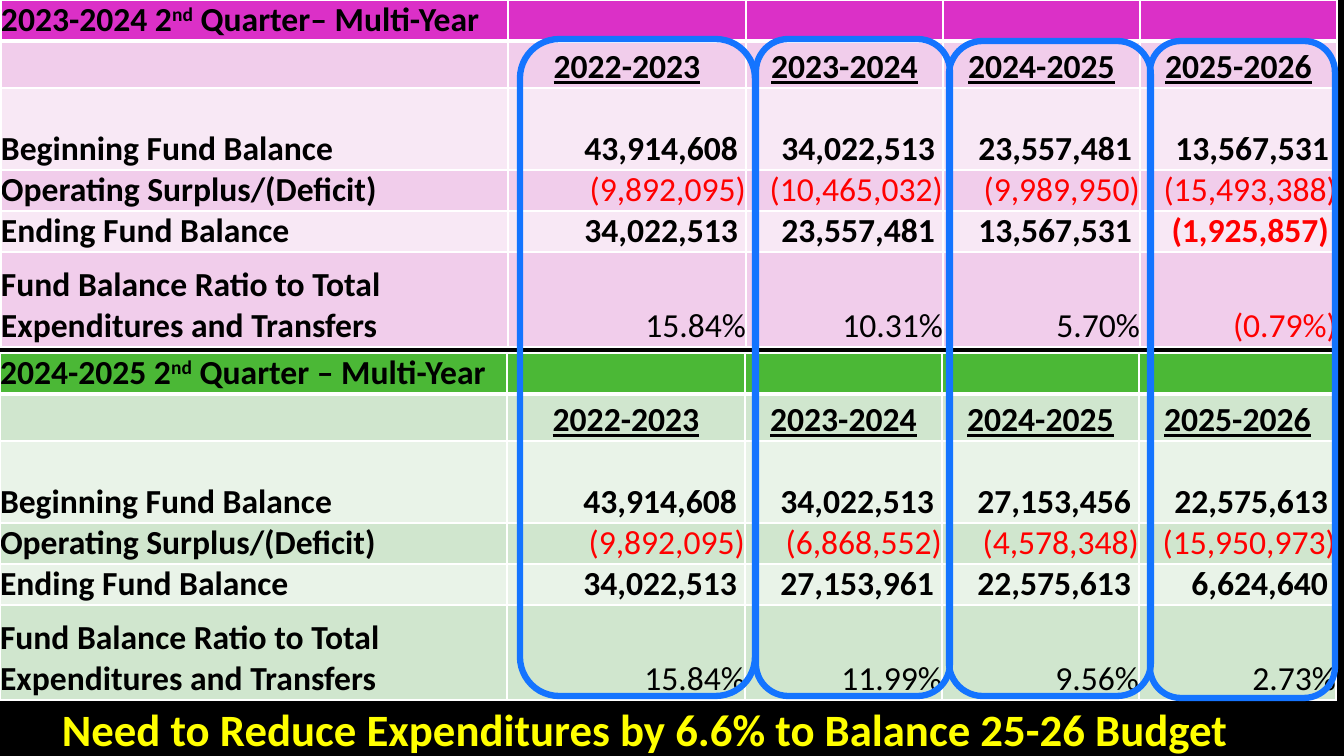
from pptx import Presentation
from pptx.dml.color import RGBColor
from pptx.enum.shapes import MSO_SHAPE
from pptx.enum.text import MSO_ANCHOR, PP_ALIGN
from pptx.oxml import parse_xml
from pptx.oxml.ns import nsdecls
from pptx.util import Pt

BLACK = RGBColor(0x00, 0x00, 0x00)
WHITE = RGBColor(0xFF, 0xFF, 0xFF)
RED = RGBColor(0xFF, 0x00, 0x00)
YELLOW = RGBColor(0xFF, 0xFF, 0x00)
BLUE = RGBColor(0x14, 0x74, 0xFF)
PINKS = (RGBColor(0xDB, 0x30, 0xC7), RGBColor(0xF1, 0xCD, 0xEB), RGBColor(0xF8, 0xE8, 0xF5))
GREENS = (RGBColor(0x4B, 0xB8, 0x36), RGBColor(0xD0, 0xE6, 0xCE), RGBColor(0xE9, 0xF3, 0xE8))

COLS = (507, 238, 197, 197, 197)
ROWS = (41, 47, 82, 41, 41, 95)
YEARS = ("2022-2023", "2023-2024", "2024-2025", "2025-2026")
LABELS = ("Beginning Fund Balance", "Operating Surplus/(Deficit)", "Ending Fund Balance",
          "Fund Balance Ratio to Total Expenditures and Transfers")
BOLD_ROWS = (2, 4)
EARLIER = (
    ("43,914,608", "34,022,513", "23,557,481", "13,567,531"),
    ("(9,892,095)", "(10,465,032)", "(9,989,950)", "(15,493,388)"),
    ("34,022,513", "23,557,481", "13,567,531", "(1,925,857)"),
    ("15.84%", "10.31%", "5.70%", "(0.79%)"),
)
LATER = (
    ("43,914,608", "34,022,513", "27,153,456", "22,575,613"),
    ("(9,892,095)", "(6,868,552)", "(4,578,348)", "(15,950,973)"),
    ("34,022,513", "27,153,961", "22,575,613", "6,624,640"),
    ("15.84%", "11.99%", "9.56%", "2.73%"),
)
FRAMES = ((520, 39, 235, 657), (756, 39, 194, 657), (949, 41, 202, 655), (1150, 41, 185, 657))


class Deck:
    """Holds the style and the current slide, and draws each kind of element."""

    scale = 12192000 / 1344
    style = {"name": "Calibri", "size": Pt(24), "bold": True}

    def __init__(self):
        self.prs = Presentation()
        self.prs.slide_width, self.prs.slide_height = self.emu(1344, 756)
        self.s = self.prs.slides.add_slide(self.prs.slide_layouts[6])
        fill = self.s.background.fill
        fill.solid()
        fill.fore_color.rgb = BLACK

    def emu(self, *px):
        return [round(v * self.scale) for v in px]

    def run(self, p, text, color=BLACK, raised=False, **fmt):
        r = p.add_run()
        r.text = text
        for key, value in {**self.style, **fmt}.items():
            setattr(r.font, key, value)
        r.font.color.rgb = color
        if raised:
            r._r.get_or_add_rPr().set("baseline", "30000")

    def borders(self, cell, **widths):
        tcPr = cell._tc.get_or_add_tcPr()
        for i, side in enumerate("LRTB"):
            tcPr.insert(i, parse_xml(
                f'<a:ln{side} {nsdecls("a")} w="{Pt(widths.get(side, 1))}"><a:solidFill>'
                f'<a:srgbClr val="{WHITE}"/></a:solidFill></a:ln{side}>'))

    def cell(self, cell, fill, align=PP_ALIGN.LEFT, gap=0):
        fmt = {"margin_left": 0, "margin_right": self.emu(gap)[0], "margin_top": 0,
               "margin_bottom": 0, "vertical_anchor": MSO_ANCHOR.BOTTOM}
        for key, value in fmt.items():
            setattr(cell, key, value)
        cell.fill.solid()
        cell.fill.fore_color.rgb = fill
        p = cell.text_frame.paragraphs[0]
        p.alignment = align
        return p

    def table(self, x, y, title, values, colors):
        head, dark, light = colors
        box = self.emu(x, y, sum(COLS), sum(ROWS))
        tbl = self.s.shapes.add_table(len(ROWS), len(COLS), *box).table
        tbl.first_row = tbl.horz_banding = False
        for col, width in zip(tbl.columns, self.emu(*COLS)):
            col.width = width
        for row, height in zip(tbl.rows, self.emu(*ROWS)):
            row.height = height
        for j in range(len(COLS)):
            p = self.cell(tbl.cell(0, j), head)
            self.borders(tbl.cell(0, j), B=3)
            if j == 0:
                for text, raised in zip(title, (False, True, False)):
                    self.run(p, text, raised=raised)
            p = self.cell(tbl.cell(1, j), dark, PP_ALIGN.CENTER)
            self.borders(tbl.cell(1, j), T=3)
            if j:
                self.run(p, YEARS[j - 1], underline=True)
        for i, (label, numbers) in enumerate(zip(LABELS, values), 2):
            fill = dark if i % 2 else light
            bold = i in BOLD_ROWS
            self.run(self.cell(tbl.cell(i, 0), fill), label)
            self.borders(tbl.cell(i, 0))
            for j, number in enumerate(numbers, 1):
                p = self.cell(tbl.cell(i, j), fill, PP_ALIGN.RIGHT, 8 if bold else 0)
                self.run(p, number, RED if number.startswith("(") else BLACK, bold=bold)
                self.borders(tbl.cell(i, j))

    def frame(self, *box):
        sp = self.s.shapes.add_shape(MSO_SHAPE.ROUNDED_RECTANGLE, *self.emu(*box))
        sp.shadow.inherit = False
        sp.fill.background()
        sp.line.color.rgb = BLUE
        sp.line.width = Pt(4.5)

    def text(self, box, text, color, **fmt):
        tf = self.s.shapes.add_textbox(*self.emu(*box)).text_frame
        tf.word_wrap = True
        self.run(tf.paragraphs[0], text, color, **fmt)


def main():
    deck = Deck()
    deck.table(0, 353, ("2024-2025 2", "nd", " Quarter – Multi-Year"), LATER, GREENS)
    deck.table(1, 0, ("2023-2024 2", "nd", " Quarter– Multi-Year"), EARLIER, PINKS)
    for box in FRAMES:
        deck.frame(*box)
    deck.text((52, 697, 1302, 64),
              "Need to Reduce Expenditures by 6.6% to Balance 25-26 Budget", YELLOW, size=Pt(32))
    deck.prs.save("out.pptx")


if __name__ == "__main__":
    main()
